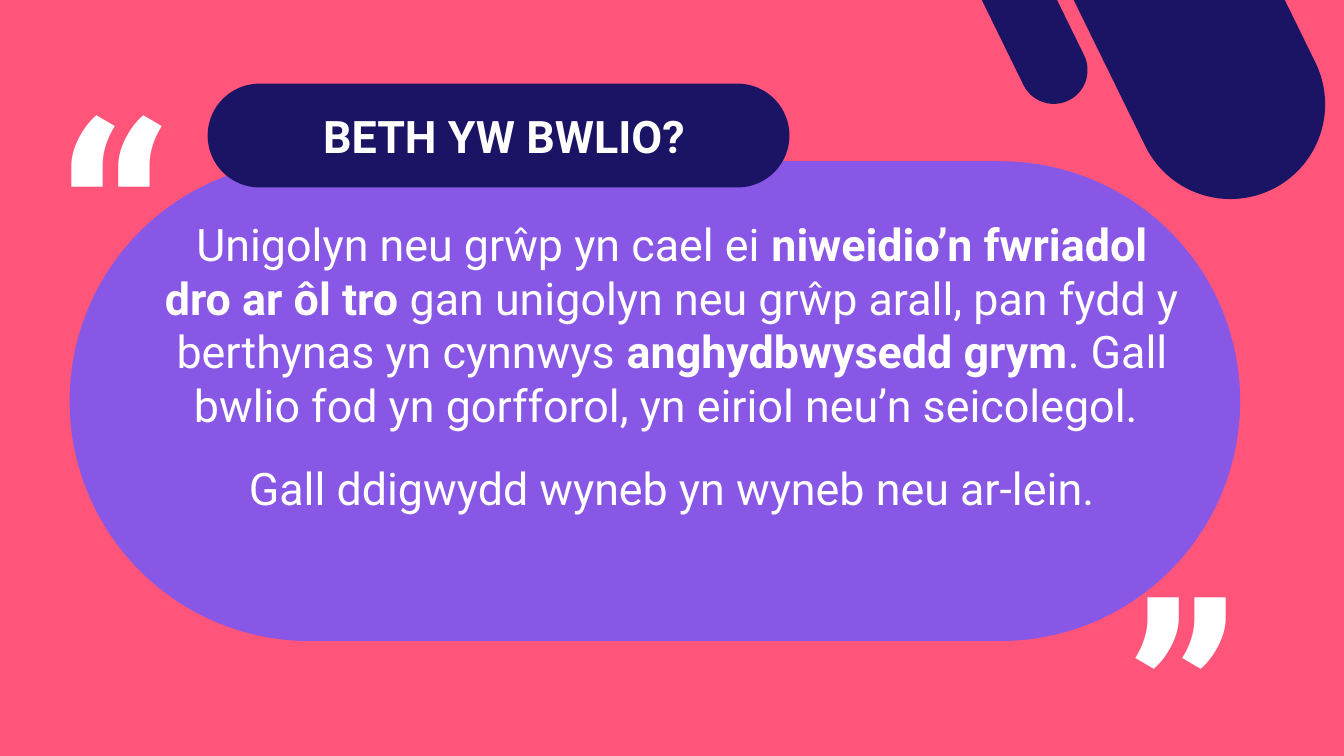
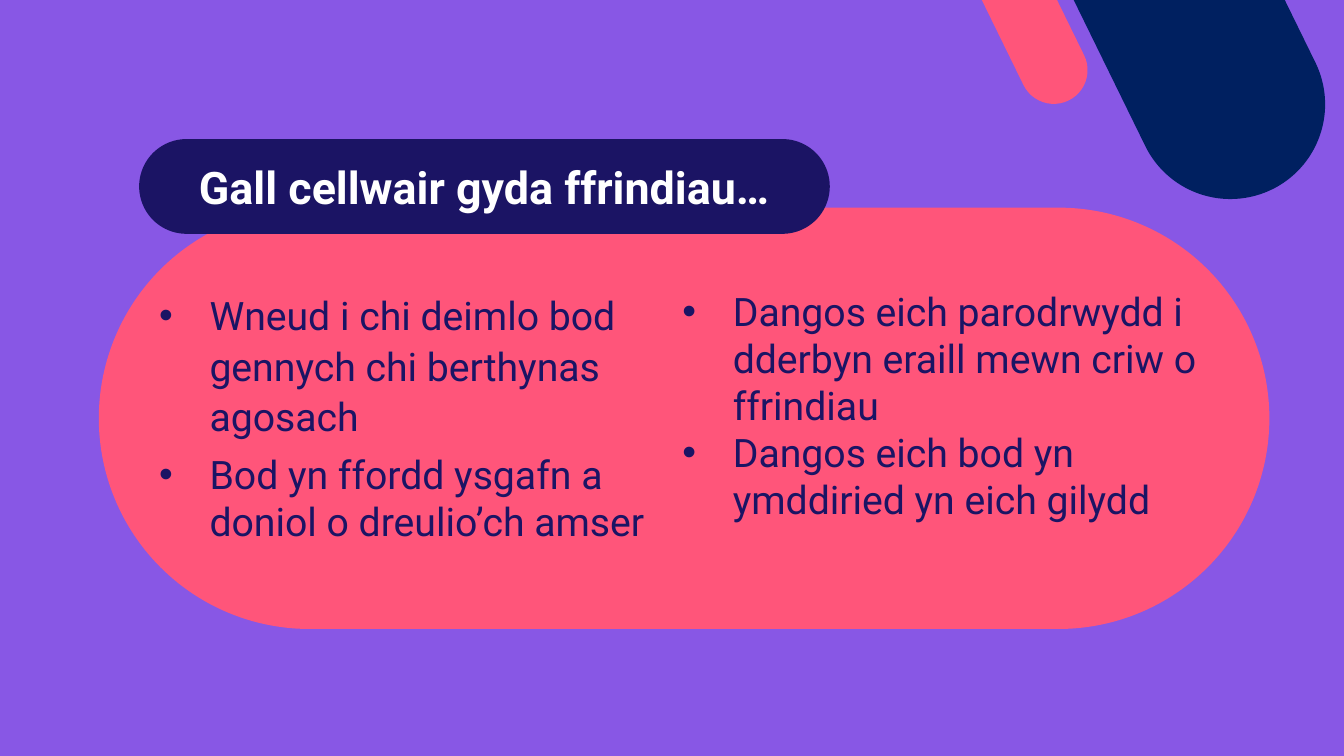
from lxml.etree import SubElement
from pptx import Presentation
from pptx.dml.color import RGBColor
from pptx.enum.shapes import MSO_SHAPE
from pptx.enum.text import MSO_ANCHOR, PP_ALIGN
from pptx.oxml.ns import qn
from pptx.util import Inches, Pt

FONT = "Roboto"
PINK, PURPLE, NAVY = "FF557A", "8857E5", "1B1464"
DEEP_BLUE, WHITE = "002060", "FFFFFF"
BODY_WIDTH = 11.61
QUOTE_SIZE = (1.88, 3.47)


def color(hex_code):
    return RGBColor.from_string(hex_code)


def add_slide(presentation, background):
    slide = presentation.slides.add_slide(presentation.slide_layouts[6])
    slide.background.fill.solid()
    slide.background.fill.fore_color.rgb = color(background)
    return slide


def add_pill(slide, box, fill, rotation=0):
    """Rectangle with fully rounded ends; box is left, top, width, height."""
    shape = slide.shapes.add_shape(MSO_SHAPE.ROUNDED_RECTANGLE, *map(Inches, box))
    shape.adjustments[0] = 0.5
    shape.rotation = rotation
    shape.shadow.inherit = False
    shape.fill.solid()
    shape.fill.fore_color.rgb = color(fill)
    shape.line.fill.background()
    return shape


def add_corner_pills(slide, large_fill, small_fill):
    add_pill(slide, (10.55, -2.98, 1.88, 5.12), large_fill, 153.9)
    add_pill(slide, (9.43, -2.6, 0.67, 3.79), small_fill, 153.9)


def add_run(paragraph, text, size, text_color=WHITE, bold=False):
    run = paragraph.add_run()
    run.text = text
    run.font.name = FONT
    run.font.size = Pt(size)
    run.font.bold = bold
    run.font.color.rgb = color(text_color)


def add_text_frame(slide, box):
    frame = slide.shapes.add_textbox(*map(Inches, box)).text_frame
    frame.word_wrap = True
    return frame


def add_paragraph(frame, is_first):
    return frame.paragraphs[0] if is_first else frame.add_paragraph()


def add_title(slide, box, text):
    frame = add_pill(slide, box, NAVY).text_frame
    frame.vertical_anchor = MSO_ANCHOR.MIDDLE
    paragraph = frame.paragraphs[0]
    paragraph.alignment = PP_ALIGN.CENTER
    add_run(paragraph, text, 32, bold=True)


def add_quote_mark(slide, left, top, rotation=0):
    box = slide.shapes.add_textbox(*map(Inches, (left, top, *QUOTE_SIZE)))
    box.rotation = rotation
    box.text_frame.word_wrap = True
    add_run(box.text_frame.paragraphs[0], "“", 200, bold=True)


def add_definition(slide, box, paragraphs):
    """Centred paragraphs, each a list of (text, bold) runs."""
    frame = add_text_frame(slide, box)
    for index, runs in enumerate(paragraphs):
        paragraph = add_paragraph(frame, index == 0)
        paragraph.alignment = PP_ALIGN.CENTER
        paragraph.space_before = Pt(21 if index else 0)
        for text, bold in runs:
            add_run(paragraph, text, 32, bold=bold)


def add_bullet(paragraph):
    properties = paragraph._p.get_or_add_pPr()
    properties.set("marL", str(Inches(0.5)))
    properties.set("indent", str(Inches(-0.5)))
    SubElement(properties, qn("a:buFont")).set("typeface", "Arial")
    SubElement(properties, qn("a:buChar")).set("char", "•")


def add_bullet_list(slide, box, items):
    """Bulleted items, each (text, line spacing, points after)."""
    frame = add_text_frame(slide, box)
    for index, (text, line_spacing, space_after) in enumerate(items):
        paragraph = add_paragraph(frame, index == 0)
        paragraph.line_spacing = line_spacing
        paragraph.space_after = Pt(space_after)
        add_bullet(paragraph)
        add_run(paragraph, text, 28, NAVY)


def build_definition_slide(presentation):
    slide = add_slide(presentation, PINK)
    add_pill(slide, (0.69, 1.6, BODY_WIDTH, 4.76), PURPLE)
    add_corner_pills(slide, NAVY, NAVY)
    add_definition(slide, (1.52, 2.1, 10.29, 3.64), [
        [("Unigolyn neu grŵp yn cael ei ", False),
         ("niweidio’n fwriadol dro ar ôl tro", True),
         (" gan unigolyn neu grŵp arall, pan fydd y berthynas yn cynnwys ", False),
         ("anghydbwysedd grym", True),
         (". Gall bwlio fod yn gorfforol, yn eiriol neu’n seicolegol. ", False)],
        [("Gall ddigwydd wyneb yn wyneb neu ar-lein.", False)],
    ])
    add_quote_mark(slide, 0.46, 0.45)
    add_quote_mark(slide, 10.53, 3.87, 180)
    add_title(slide, (2.06, 0.83, 5.77, 1.03), " BETH YW BWLIO?")


def build_banter_slide(presentation):
    slide = add_slide(presentation, PURPLE)
    add_pill(slide, (0.98, 2.06, BODY_WIDTH, 4.18), PINK)
    add_corner_pills(slide, DEEP_BLUE, PINK)
    add_title(slide, (1.38, 1.38, 6.85, 0.94), "Gall cellwair gyda ffrindiau…")
    add_bullet_list(slide, (1.48, 2.81, 5.33, 2.67), [
        ("Wneud i chi deimlo bod gennych chi berthynas agosach", 1.07, 8),
        ("Bod yn ffordd ysgafn a doniol o dreulio’ch amser", 1.0, 0),
    ])
    add_bullet_list(slide, (6.67, 2.8, 5.64, 3.43), [
        ("Dangos eich parodrwydd i dderbyn eraill mewn criw o ffrindiau", 1.0, 0),
        ("Dangos eich bod yn ymddiried yn eich gilydd", 1.0, 0),
    ])


def main():
    presentation = Presentation()
    presentation.slide_width = Inches(13.33)
    presentation.slide_height = Inches(7.5)
    build_definition_slide(presentation)
    build_banter_slide(presentation)
    presentation.save("out.pptx")


if __name__ == "__main__":
    main()
